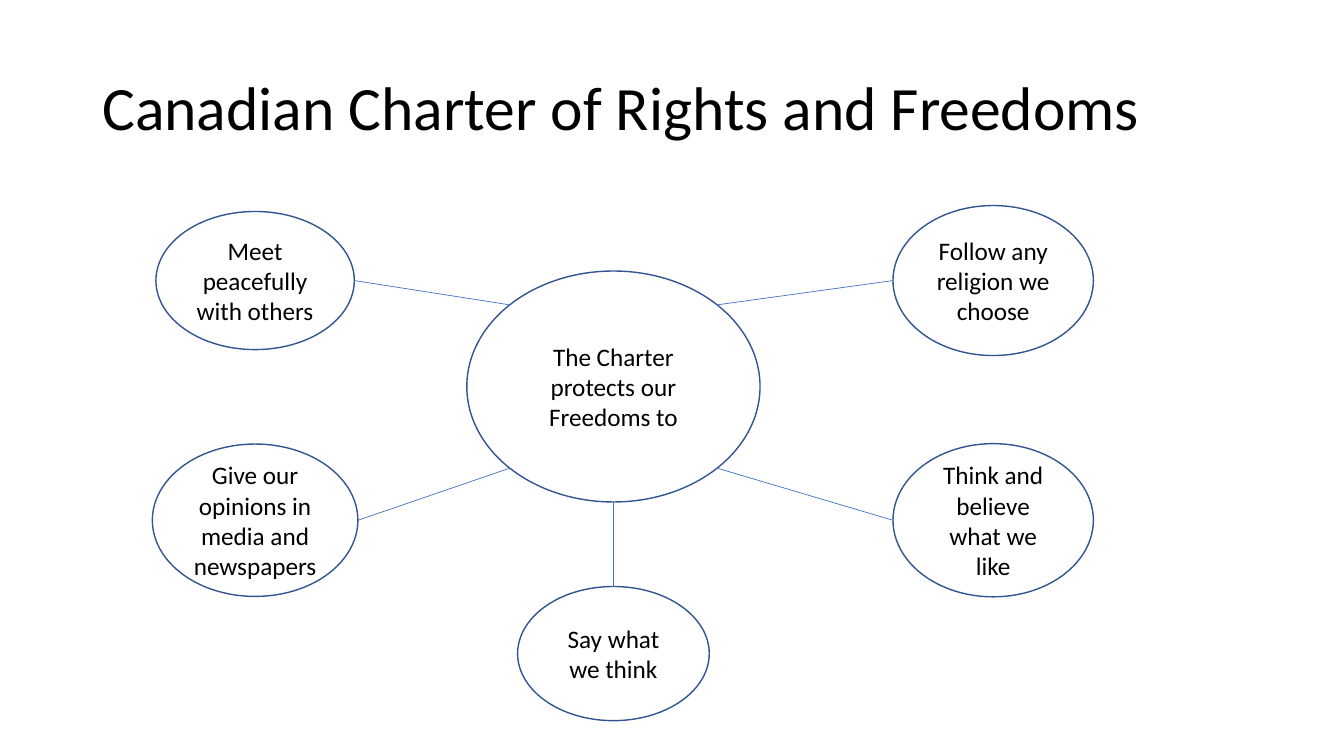
from math import hypot

from lxml.etree import SubElement
from pptx import Presentation
from pptx.dml.color import RGBColor
from pptx.enum.shapes import MSO_CONNECTOR, MSO_SHAPE
from pptx.enum.text import MSO_ANCHOR, PP_ALIGN
from pptx.oxml.ns import qn
from pptx.util import Cm, Pt


def color(value):
    return RGBColor.from_string(value)


def write(shape, text, size, align):
    frame = shape.text_frame
    frame.word_wrap = True
    frame.vertical_anchor = MSO_ANCHOR.MIDDLE
    frame.text = text
    para = frame.paragraphs[0]
    para.alignment = align
    font = para.runs[0].font
    font.name = "Calibri"
    font.size = Pt(size)
    font.color.rgb = color("000000")
    return para


deck = Presentation()
deck.slide_width = Cm(33.87)
deck.slide_height = Cm(19.05)
page = deck.slides.add_slide(deck.slide_layouts[6])

# Title
title = page.shapes.add_textbox(Cm(2.33), Cm(1.01), Cm(29.21), Cm(3.53))
heading = write(title, "Canadian Charter of Rights and Freedoms", 44, PP_ALIGN.LEFT)
heading.line_spacing = 0.9

# Hub and freedoms: text, centre x, centre y, width, height
hub = ("The Charter protects our Freedoms to", 15.46, 9.74, 7.39, 5.82)
left, right, upper, lower = 6.43, 25.03, 7.07, 13.11
freedoms = [
    ("Follow any religion we choose", right, upper, 5.05, 3.78),
    ("Think and believe what we like", right, lower, 5.05, 3.86),
    ("Say what we think", hub[1], 16.47, 4.83, 3.38),
    ("Meet peacefully with others", left, upper, 5, 3.48),
    ("Give our opinions in media and newspapers", left, lower, 5.18, 3.84),
]

# Ovals
for text, x, y, width, height in [hub] + freedoms:
    oval = page.shapes.add_shape(
        MSO_SHAPE.OVAL, Cm(x - width / 2), Cm(y - height / 2), Cm(width), Cm(height)
    )
    oval.shadow.inherit = False
    oval.fill.solid()
    oval.fill.fore_color.rgb = color("FFFFFF")
    oval.line.color.rgb = color("325491")
    oval.line.width = Pt(1)
    write(oval, text, 18, PP_ALIGN.CENTER)

# Spokes: from the hub's rim to the facing side of each freedom
_, hub_x, hub_y, hub_width, hub_height = hub
for _, x, y, width, height in freedoms:
    across = (x > hub_x) - (x < hub_x)
    down = 1 if y > hub_y else -1
    reach = 2 * hypot(across, down)
    end_x = x - across * width / 2
    end_y = y if across else y - down * height / 2
    spoke = page.shapes.add_connector(
        MSO_CONNECTOR.STRAIGHT,
        Cm(hub_x + across * hub_width / reach),
        Cm(hub_y + down * hub_height / reach),
        Cm(end_x),
        Cm(end_y),
    )
    spoke.line.color.rgb = color("4472C4")
    spoke.line.width = Pt(0.5)
    SubElement(spoke._element.spPr, qn("a:effectLst"))

deck.save("out.pptx")
